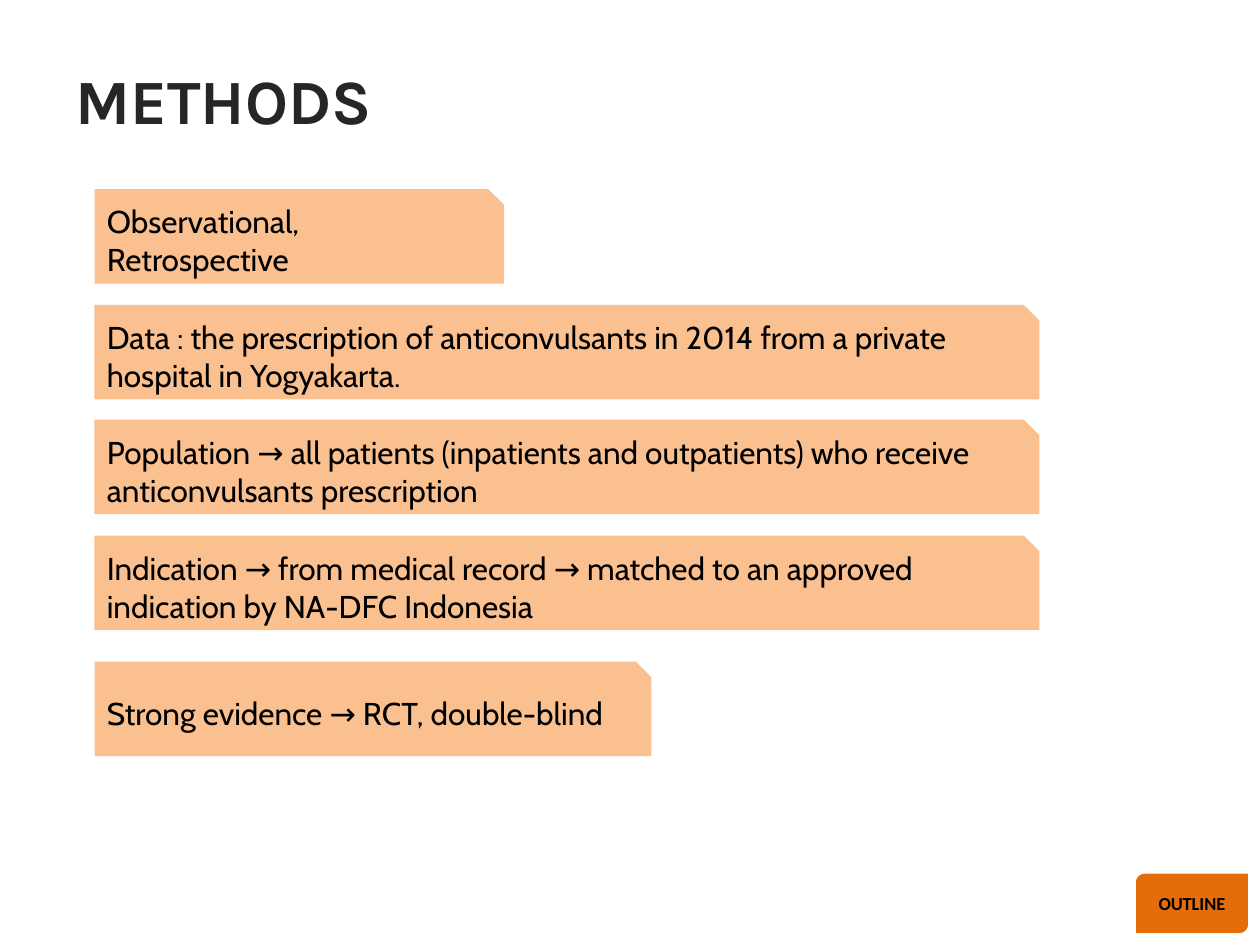
import pptx
import pptx.util
from pptx.dml.color import RGBColor
from pptx.enum.shapes import MSO_SHAPE
from pptx.enum.text import MSO_ANCHOR, PP_ALIGN
from pptx.util import Inches

CHARCOAL = RGBColor(0x26, 0x26, 0x26)
BLACK = RGBColor(0, 0, 0)
WHITE = RGBColor(0xFF, 0xFF, 0xFF)
PEACH = RGBColor(0xFA, 0xC0, 0x90)
ORANGE = RGBColor(0xE4, 0x6C, 0x0A)

STEP_LEFT, STEP_HEIGHT = 0.75, 0.75

# Top, width and wording of each step
STEPS = [
    (1.5, 3.25, "Observational, Retrospective"),
    (2.42, 7.5, "Data : the prescription of anticonvulsants in 2014 "
                "from a private hospital in Yogyakarta."),
    (3.33, 7.5, "Population → all patients (inpatients and outpatients) "
                "who receive anticonvulsants prescription"),
    (4.25, 7.5, "Indication → from medical record → matched to an approved "
                "indication by NA-DFC Indonesia"),
    (5.25, 4.42, "Strong evidence → RCT, double-blind"),
]


def write(shape, text, font_name, size, color, bold=False, align=PP_ALIGN.LEFT):
    frame = shape.text_frame
    frame.word_wrap = True
    frame.vertical_anchor = MSO_ANCHOR.MIDDLE
    paragraph = frame.paragraphs[0]
    paragraph.text = text
    paragraph.alignment = align
    paragraph.font.name = font_name
    paragraph.font.size = pptx.util.Pt(size)
    paragraph.font.bold = bold
    paragraph.font.color.rgb = color


def add_title(slide, text):
    title = slide.shapes.add_textbox(
        Inches(0.5), Inches(0.16), Inches(9), Inches(1.25))
    write(title, text, "Karla", 36, CHARCOAL, bold=True)


def add_panel(slide, preset, left, top, width, height, fill):
    panel = slide.shapes.add_shape(
        preset, Inches(left), Inches(top), Inches(width), Inches(height))
    panel.shadow.inherit = False
    panel.fill.solid()
    panel.fill.fore_color.rgb = fill
    panel.line.fill.background()
    return panel


def add_step(slide, top, width, text):
    step = add_panel(slide, MSO_SHAPE.SNIP_1_RECTANGLE,
                     STEP_LEFT, top, width, STEP_HEIGHT, PEACH)
    write(step, text, "Cabin", 18, BLACK)


def add_outline_button(slide):
    button = add_panel(slide, MSO_SHAPE.ROUND_2_DIAG_RECTANGLE,
                       9, 6.92, 0.92, 0.5, ORANGE)
    button.line.color.rgb = WHITE
    button.line.width = pptx.util.Pt(2)
    write(button, "OUTLINE", "Calibri", 10.5, BLACK,
          bold=True, align=PP_ALIGN.CENTER)


def main():
    deck = pptx.Presentation()
    deck.slide_width, deck.slide_height = Inches(10), Inches(7.5)
    slide = deck.slides.add_slide(deck.slide_layouts[6])

    add_title(slide, "METHODS")

    # Study design, from top to bottom
    for top, width, text in STEPS:
        add_step(slide, top, width, text)

    # Button in the lower right corner
    add_outline_button(slide)
    deck.save("out.pptx")


if __name__ == "__main__":
    main()
